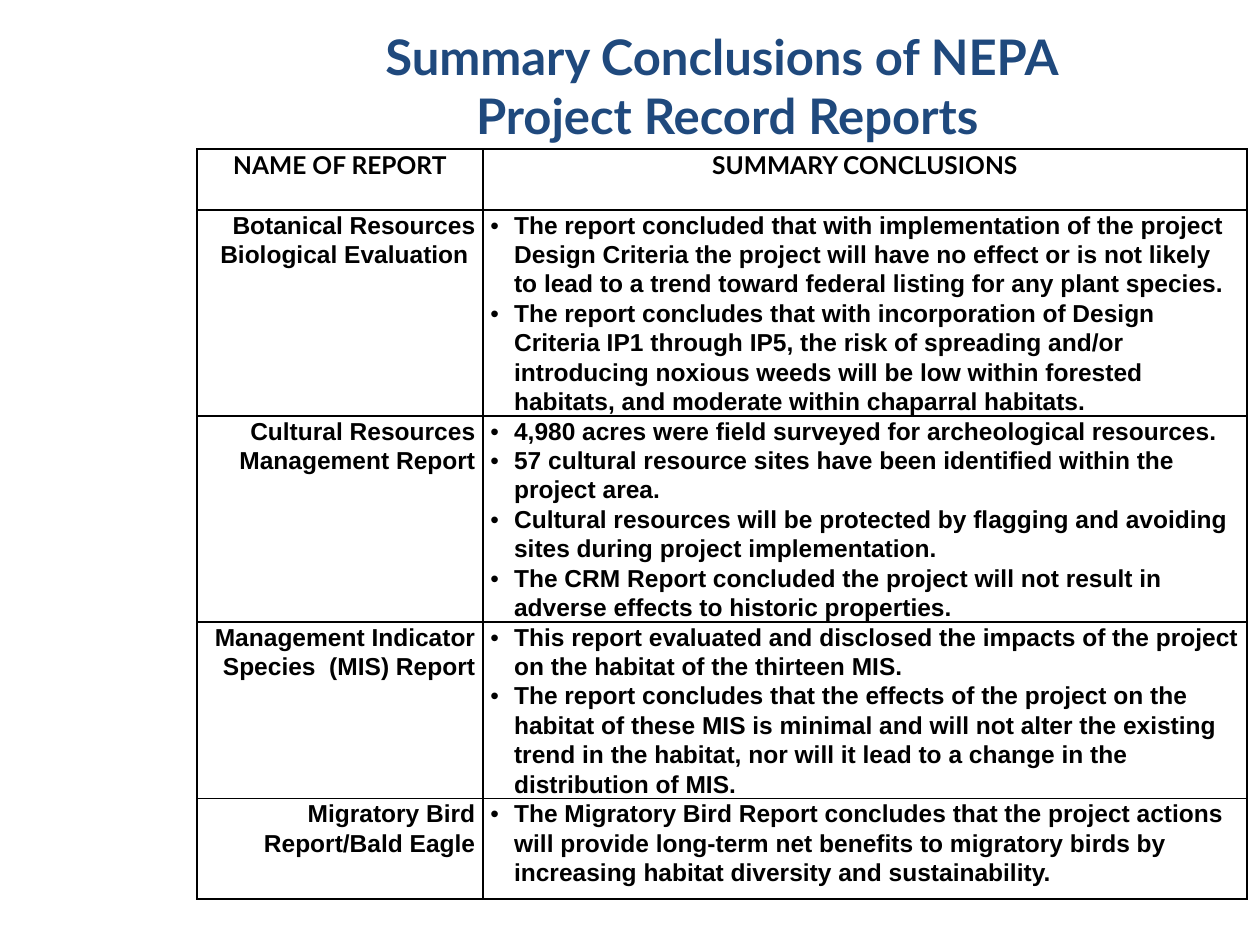
from lxml.etree import SubElement
from pptx import Presentation
from pptx.dml.color import RGBColor
from pptx.enum.text import MSO_ANCHOR, MSO_AUTO_SIZE, PP_ALIGN
from pptx.oxml.ns import qn
from pptx.util import Pt


def color(value):
    return RGBColor.from_string(value)


def add_borders(cell):
    tcPr = cell._tc.get_or_add_tcPr()
    for side in ("a:lnL", "a:lnR", "a:lnT", "a:lnB"):
        ln = SubElement(tcPr, qn(side), w=str(Pt(1)))
        fill = SubElement(ln, qn("a:solidFill"))
        SubElement(fill, qn("a:srgbClr"), val="000000")


reports = [
    ("Botanical Resources Biological Evaluation ", [
        "The report concluded that with implementation of the project Design Criteria the project will have no effect or is not likely to lead to a trend toward federal listing for any plant species.",
        "The report concludes that with incorporation of Design Criteria IP1 through IP5, the risk of spreading and/or introducing noxious weeds will be low within forested habitats, and moderate within chaparral habitats.",
    ]),
    ("Cultural Resources Management Report", [
        "4,980 acres were field surveyed for archeological resources.",
        "57 cultural resource sites have been identified within the project area.",
        "Cultural resources will be protected by flagging and avoiding sites during project implementation.",
        "The CRM Report concluded the project will not result in adverse effects to historic properties.",
    ]),
    ("Management Indicator Species  (MIS) Report", [
        "This report evaluated and disclosed the impacts of the project on the habitat of the thirteen MIS.",
        "The report concludes that the effects of the project on the habitat of these MIS is minimal and will not alter the existing trend in the habitat, nor will it lead to a change in the distribution of MIS.",
    ]),
    ("Migratory Bird Report/Bald Eagle", [
        "The Migratory Bird Report concludes that the project actions will provide long-term net benefits to migratory birds by increasing habitat diversity and sustainability.",
    ]),
]
rows = [("NAME OF REPORT", ["SUMMARY CONCLUSIONS"])] + reports
col_widths = [163.5, 436.5]
row_heights = [35, 117.6, 117.6, 100.8, 57.4]

prs = Presentation()
prs.slide_width, prs.slide_height = Pt(720), Pt(540)
s = prs.slides.add_slide(prs.slide_layouts[5])

# Title
title = s.shapes.title
title.left, title.top, title.width, title.height = Pt(147), Pt(11.5), Pt(537), Pt(107)
tf = title.text_frame
tf.text = "Summary Conclusions of NEPA \vProject Record Reports"
tf.word_wrap = True
tf.auto_size = MSO_AUTO_SIZE.NONE
tf.vertical_anchor = MSO_ANCHOR.TOP
tf.margin_left = tf.margin_right = tf.margin_top = tf.margin_bottom = Pt(3.6)
p = tf.paragraphs[0]
p.alignment = PP_ALIGN.CENTER
for r in p.runs:
    r.font.name, r.font.size, r.font.bold = "Lato", Pt(28), True
    r.font.color.rgb = color("1F497D")

# Table
table = s.shapes.add_table(len(rows), 2, Pt(112.5), Pt(85), Pt(sum(col_widths)),
                           Pt(sum(row_heights))).table
table.first_row = table.horz_banding = False
for col, width in zip(table.columns, col_widths):
    col.width = Pt(width)

for i, (name, conclusions) in enumerate(rows):
    table.rows[i].height = Pt(row_heights[i])
    for j, lines in enumerate([[name], conclusions]):
        cell = table.cell(i, j)
        cell.margin_left = cell.margin_right = Pt(4.3)
        cell.margin_top = cell.margin_bottom = 0
        add_borders(cell)
        cell.fill.background()
        tf = cell.text_frame
        tf.text = "\n".join(lines)
        for p in tf.paragraphs:
            p.line_spacing = 1.07
            if i == 0:
                p.alignment = PP_ALIGN.CENTER
            elif j == 0:
                p.alignment = PP_ALIGN.RIGHT
            else:
                pPr = p._p.get_or_add_pPr()
                pPr.set("marL", str(Pt(13.5)))
                pPr.set("indent", str(-Pt(13.5)))
                SubElement(pPr, qn("a:buFont"), typeface="Arial")
                SubElement(pPr, qn("a:buChar"), char="•")
            for r in p.runs:
                r.font.name = "Arial" if i else "Lato"
                r.font.size, r.font.bold = Pt(14), True
                r.font.color.rgb = color("000000")

prs.save("out.pptx")
